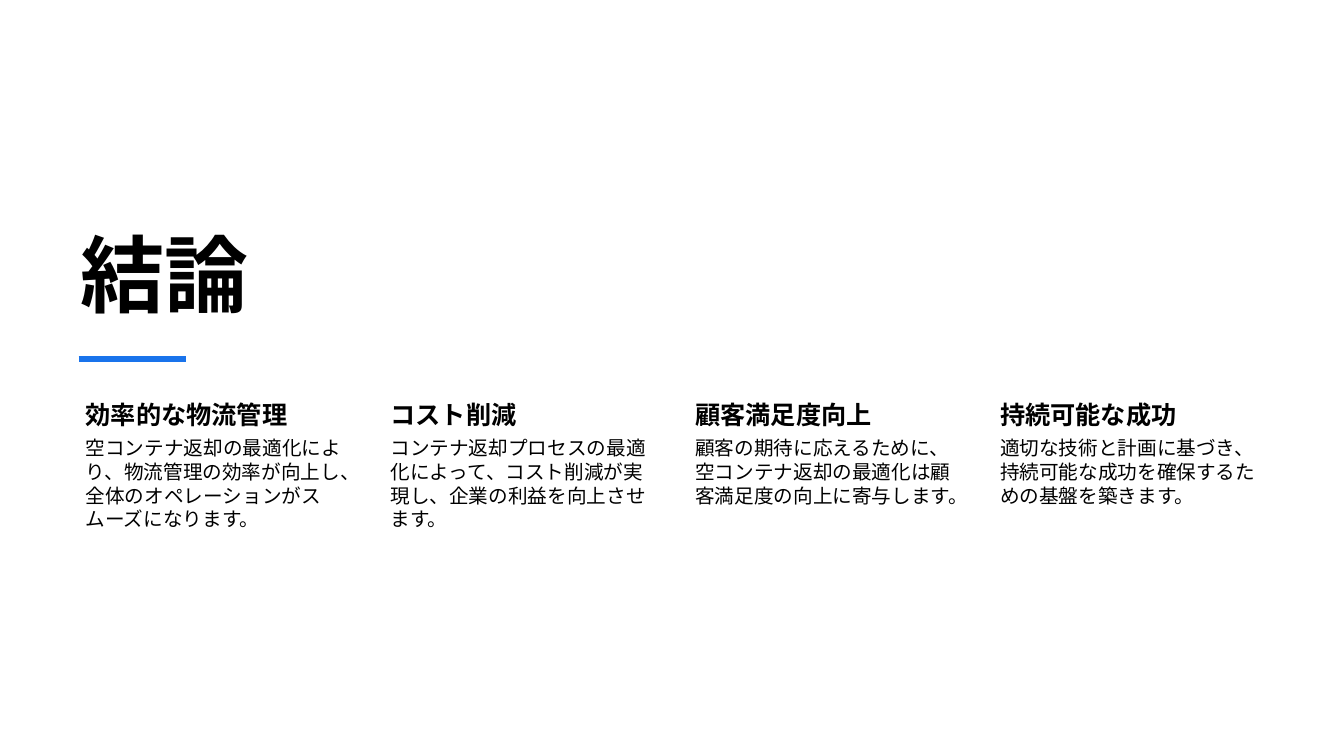
from lxml.etree import SubElement
from pptx import Presentation
from pptx.dml.color import RGBColor
from pptx.enum.lang import MSO_LANGUAGE_ID
from pptx.enum.shapes import MSO_CONNECTOR
from pptx.enum.text import MSO_ANCHOR, MSO_AUTO_SIZE, PP_ALIGN
from pptx.oxml.ns import qn
from pptx.util import Pt

COLORS = {"text": "000000", "accent": "1973EB"}
POINTS = [
    ("効率的な物流管理",
     "空コンテナ返却の最適化により、物流管理の効率が向上し、全体のオペレーションがスムーズになります。"),
    ("コスト削減",
     "コンテナ返却プロセスの最適化によって、コスト削減が実現し、企業の利益を向上させます。"),
    ("顧客満足度向上",
     "顧客の期待に応えるために、空コンテナ返却の最適化は顧客満足度の向上に寄与します。"),
    ("持続可能な成功",
     "適切な技術と計画に基づき、持続可能な成功を確保するための基盤を築きます。"),
]
LEFT, STEP, WIDTH = 50.4, 217.7, 198


class Deck:
    """Holds the font, the colours and the current slide."""

    def __init__(self, slide, face, colors):
        self.slide, self.face, self.colors = slide, face, colors

    def color(self, name):
        return RGBColor.from_string(self.colors[name])

    def fill(self, frame, text, size, bold, insets):
        """Put text in a frame; insets are left, top, right and bottom."""
        frame.word_wrap = True
        frame.auto_size = MSO_AUTO_SIZE.NONE
        (frame.margin_left, frame.margin_top,
         frame.margin_right, frame.margin_bottom) = map(Pt, insets)
        para = frame.paragraphs[0]
        para.text = text
        para.alignment = PP_ALIGN.LEFT
        font = para.font
        font.size, font.bold, font.name = Pt(size), bold, self.face
        font.color.rgb = self.color("text")
        font.language_id = MSO_LANGUAGE_ID.JAPANESE
        # East Asian text takes its typeface from a:ea
        props = para._p.pPr.find(qn("a:defRPr"))
        SubElement(props, qn("a:ea"), typeface=self.face)

    def title(self, text, box, size):
        shape = self.slide.shapes.title
        shape.left, shape.top, shape.width, shape.height = map(Pt, box)
        self.fill(shape.text_frame, text, size, True, (7.2, 3.6, 7.2, 3.6))
        shape.text_frame.vertical_anchor = MSO_ANCHOR.BOTTOM

    def label(self, text, box, size, bold, pad):
        shape = self.slide.shapes.add_textbox(*map(Pt, box))
        self.fill(shape.text_frame, text, size, bold, (10.8, pad, pad, pad))

    def rule(self, start, end, weight):
        line = self.slide.shapes.add_connector(
            MSO_CONNECTOR.STRAIGHT, *map(Pt, start + end))
        line.line.color.rgb = self.color("accent")
        line.line.width = Pt(weight)
        SubElement(line._element.spPr, qn("a:effectLst"))


def main():
    prs = Presentation()
    prs.slide_width, prs.slide_height = Pt(960), Pt(540)
    deck = Deck(prs.slides.add_slide(prs.slide_layouts[5]), "Lato", COLORS)
    deck.title("結論", (LEFT, 123.8, 643, 110.9), 60)
    deck.rule((56.2, 256.3), (133.2, 256.3), 4.5)
    for i, (head, body) in enumerate(POINTS):
        left = LEFT + i * STEP
        deck.label(head, (left, 283, WIDTH, 27.3), 18, True, 2.2)
        deck.label(body, (left, 310.3, WIDTH, 168.5), 14, False, 1.4)
    prs.save("out.pptx")


if __name__ == "__main__":
    main()
